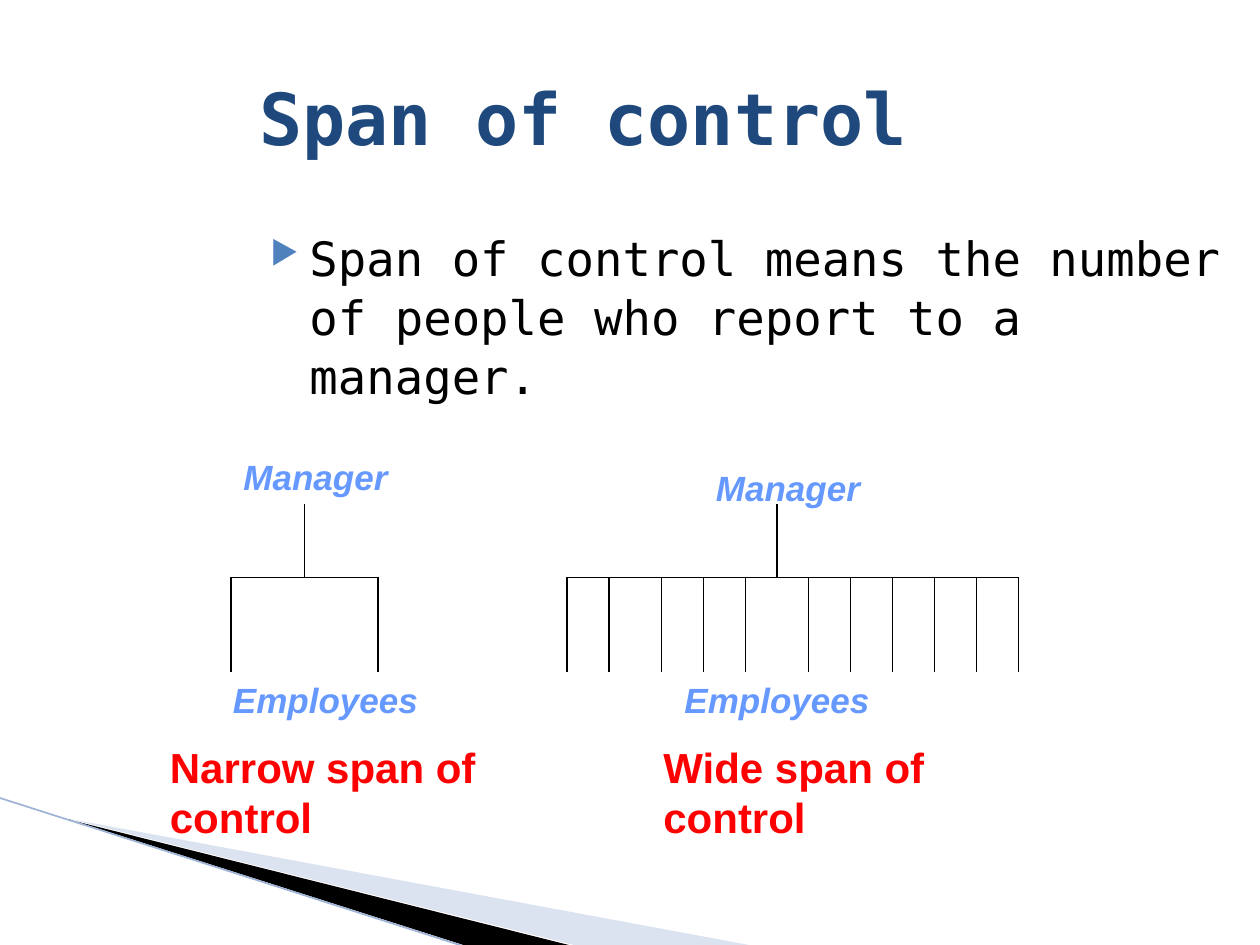
from dataclasses import dataclass

from lxml.etree import SubElement
from pptx import Presentation
from pptx.dml.color import RGBColor
from pptx.enum.shapes import MSO_CONNECTOR
from pptx.enum.text import MSO_ANCHOR, MSO_AUTO_SIZE
from pptx.oxml.ns import qn
from pptx.util import Pt


@dataclass(frozen=True)
class Theme:
    """Colours, fonts and type sizes of the slide."""
    title: str = "1F497D"
    ink: str = "000000"
    bullet: str = "4F81BD"
    role: str = "6699FF"
    caption: str = "FF0000"
    wedge: str = "A7B9DB"
    edge: str = "9EB3D6"
    mono: str = "DejaVu Sans Mono"
    sans: str = "Arial"
    title_size: int = 41
    body_size: int = 27
    caption_size: int = 24
    role_size: int = 20


THEME = Theme()
BAR_TOP, BAR_Y, BAR_BOTTOM = 288, 330, 384


def add_wedge(s, points, color, alpha=None):
    """Draw a filled outline through the points."""
    builder = s.shapes.build_freeform(*points[0], scale=Pt(1))
    builder.add_line_segments(points[1:], close=True)
    sp = builder.convert_to_shape()
    sp.shadow.inherit = False
    sp.line.fill.background()
    sp.fill.solid()
    sp.fill.fore_color.rgb = RGBColor.from_string(color)
    if alpha:
        clr = sp.fill._xPr.find(qn("a:solidFill"))[0]
        SubElement(clr, qn("a:alpha"), val=str(alpha * 1000))


def add_line(s, x1, y1, x2, y2, color=THEME.ink, width=0.75):
    """Draw a straight line without a shadow."""
    cxn = s.shapes.add_connector(MSO_CONNECTOR.STRAIGHT, Pt(x1), Pt(y1), Pt(x2), Pt(y2))
    cxn.line.color.rgb = RGBColor.from_string(color)
    cxn.line.width = Pt(width)
    SubElement(cxn._element.spPr, qn("a:effectLst"))


def add_text(s, box, text, font, size, color, bold=False, italic=False):
    """Add a wrapping text box and return its text frame."""
    tf = s.shapes.add_textbox(*map(Pt, box)).text_frame
    tf.word_wrap = True
    tf.text = text
    f = tf.paragraphs[0].runs[0].font
    f.name, f.size, f.bold, f.italic = font, Pt(size), bold, italic
    f.color.rgb = RGBColor.from_string(color)
    return tf


def add_bullet(p, char, color, percent, left, hanging):
    """Give a paragraph a coloured bullet with a hanging indent."""
    pPr = p._p.get_or_add_pPr()
    pPr.set("marL", str(Pt(left)))
    pPr.set("indent", str(-Pt(hanging)))
    clr = SubElement(pPr, qn("a:buClr"))
    SubElement(clr, qn("a:srgbClr"), val=color)
    SubElement(pPr, qn("a:buSzPct"), val=str(percent * 1000))
    SubElement(pPr, qn("a:buChar"), char=char)


def add_label(s, box, text):
    """Add an italic role label."""
    tf = add_text(s, box, text, THEME.sans, THEME.role_size, THEME.role, True, True)
    tf.auto_size = MSO_AUTO_SIZE.SHAPE_TO_FIT_TEXT


def add_caption(s, box, text):
    """Add a bold caption below a tree."""
    tf = add_text(s, box, text, THEME.sans, THEME.caption_size, THEME.caption, True)
    tf.auto_size = MSO_AUTO_SIZE.SHAPE_TO_FIT_TEXT


def add_tree(s, manager_x, employee_xs):
    """Draw a manager stem, a crossbar and one drop per employee."""
    add_line(s, manager_x, BAR_TOP, manager_x, BAR_Y)
    add_line(s, employee_xs[0], BAR_Y, employee_xs[-1], BAR_Y)
    for x in employee_xs:
        add_line(s, x, BAR_Y, x, BAR_BOTTOM)


def add_backdrop(s):
    """Draw the wedges in the lower left corner."""
    add_wedge(s, [(39.6, 468.5), (428.4, 540.5), (328.3, 540.5), (39.6, 468)], THEME.wedge, 40)
    add_wedge(s, [(38.2, 467.5), (329, 540.7), (267.8, 541.2), (38.9, 468)], THEME.ink)
    add_line(s, -0.7, 455.8, 267.1, 541.4, THEME.edge, 0.95)


def main():
    """Build the slide and save it."""
    prs = Presentation()
    prs.slide_width, prs.slide_height = Pt(720), Pt(540)
    s = prs.slides.add_slide(prs.slide_layouts[6])
    add_backdrop(s)

    tf = add_text(s, (141, 21.6, 579, 90), "Span of control",
                  THEME.mono, THEME.title_size, THEME.title, True)
    tf.vertical_anchor = MSO_ANCHOR.MIDDLE
    tf = add_text(s, (141, 126, 579, 356.4),
                  "Span of control means the number of people who report to a manager.",
                  THEME.mono, THEME.body_size, THEME.ink)
    p = tf.paragraphs[0]
    add_bullet(p, "▶", THEME.bullet, 68, 28.8, 22.3)
    p.line_spacing = 1.04

    add_tree(s, 174, [132, 216])
    wide = [start + 24 * i for start, n in ((324, 2), (378, 3), (462, 6)) for i in range(n)]
    add_tree(s, 444, wide)

    add_caption(s, (90, 420, 270, 65.5), "Narrow span of control")
    add_caption(s, (372, 420, 234, 65.5), "Wide span of control")
    for x in (126, 384):
        add_label(s, (x, 384, 132, 31), "Employees")
    for x, y in ((132, 257), (402, 263)):
        add_label(s, (x, y, 114, 31), "Manager")
    prs.save("out.pptx")


if __name__ == "__main__":
    main()
